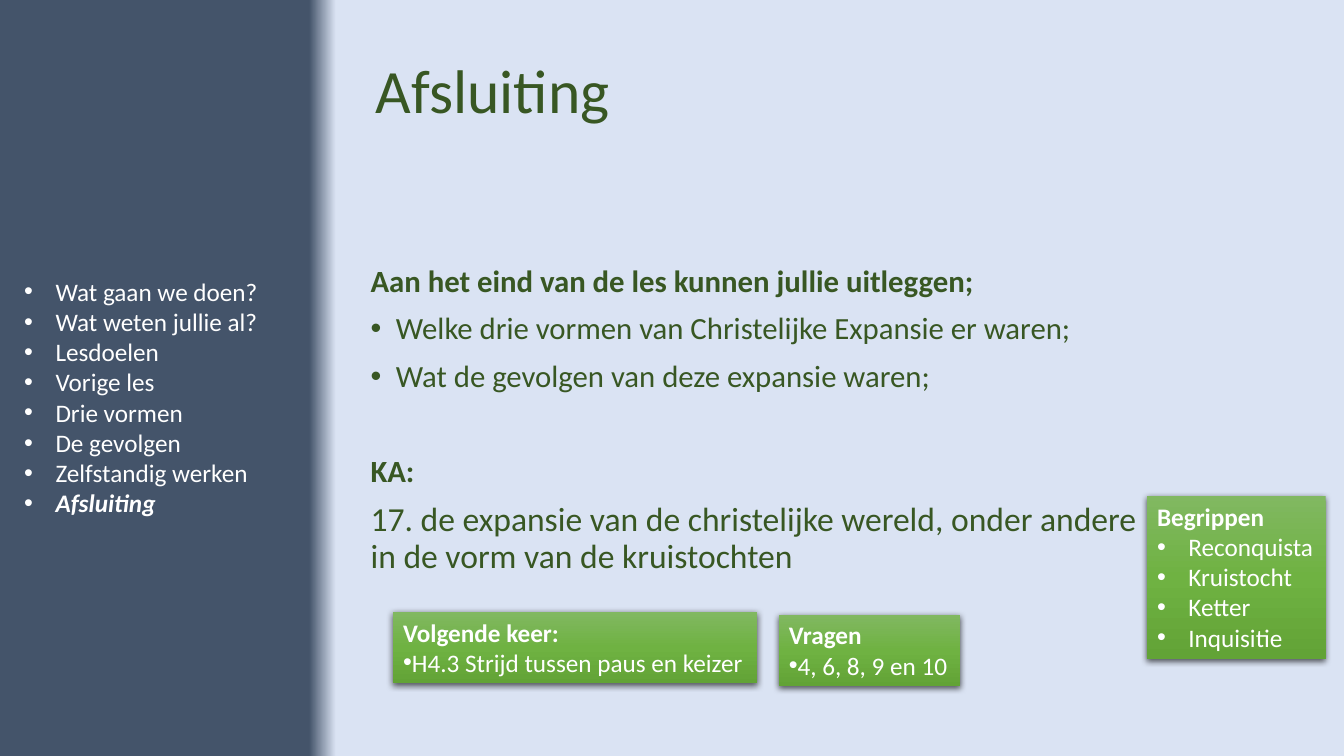
from dataclasses import dataclass

from lxml import etree
from pptx import Presentation
from pptx import util as u
from pptx.dml.color import RGBColor
from pptx.enum import shapes, text
from pptx.oxml.ns import qn

GREEN, WHITE, NAVY, PALE = "385723", "FFFFFF", "44546A", "DAE3F3"
CARD_STOPS = [(0, "81B861"), (50, "6FB242"), (100, "62A336")]
NAV_INDENT, BODY_INDENT = 0.79, 0.64


@dataclass
class Line:
    words: str
    bold: bool = False
    italic: bool = False
    bullet: bool = False
    indent: float = 0
    size: float = 18
    before: float = 0
    spacing: float = 1.0


@dataclass
class Block:
    left: float
    top: float
    width: float
    height: float
    lines: list[Line]
    color: str = WHITE
    wrap: bool = False
    card: bool = False
    anchor: text.MSO_ANCHOR = text.MSO_ANCHOR.TOP


def rgb(value: str) -> RGBColor:
    return RGBColor.from_string(value)


def set_gradient(fill, owner, stops: list[tuple[int, str]], angle: int) -> None:
    """Fill with a linear gradient; owner is the XML element that holds it."""
    fill.gradient()
    fill.gradient_angle = angle
    stop_list = next(owner.iter(qn("a:gsLst")))
    for old_stop in list(stop_list):
        stop_list.remove(old_stop)
    for percent, color in stops:
        stop = etree.SubElement(stop_list, qn("a:gs"), pos=str(percent * 1000))
        etree.SubElement(stop, qn("a:srgbClr"), val=color)


def style_card(card) -> None:
    """Give a card its green gradient and soft drop shadow."""
    set_gradient(card.fill, card.element.spPr, CARD_STOPS, 270)
    card.line.fill.background()
    card.shadow.inherit = False
    effects = card.element.spPr.find(qn("a:effectLst"))
    shadow = etree.SubElement(
        effects, qn("a:outerShdw"), blurRad=str(u.Pt(4.5)), dist=str(u.Pt(1.5)),
        dir="5400000", algn="ctr", rotWithShape="0")
    shade = etree.SubElement(shadow, qn("a:srgbClr"), val="000000")
    etree.SubElement(shade, qn("a:alpha"), val="63000")


def write_line(paragraph, line: Line, color: str) -> None:
    layout = {"alignment": text.PP_ALIGN.LEFT, "line_spacing": line.spacing,
              "space_before": u.Pt(line.before)}
    for name, value in layout.items():
        setattr(paragraph, name, value)
    run = paragraph.add_run()
    run.text = line.words
    face = {"name": "Calibri", "size": u.Pt(line.size),
            "bold": line.bold, "italic": line.italic}
    for name, value in face.items():
        setattr(run.font, name, value)
    run.font.color.rgb = rgb(color)
    if line.bullet:
        properties = paragraph._p.get_or_add_pPr()
        properties.set("marL", str(u.Cm(line.indent)))
        properties.set("indent", str(-u.Cm(line.indent)))
        etree.SubElement(properties, qn("a:buFont"), typeface="Arial")
        etree.SubElement(properties, qn("a:buChar"), char="•")


def draw_block(slide, block: Block) -> None:
    place = [u.Cm(n) for n in (block.left, block.top, block.width, block.height)]
    if block.card:
        holder = slide.shapes.add_shape(shapes.MSO_SHAPE.RECTANGLE, *place)
        style_card(holder)
    else:
        holder = slide.shapes.add_textbox(*place)
    frame = holder.text_frame
    settings = {"word_wrap": block.wrap, "vertical_anchor": block.anchor,
                "auto_size": text.MSO_AUTO_SIZE.NONE if block.wrap
                else text.MSO_AUTO_SIZE.SHAPE_TO_FIT_TEXT}
    for name, value in settings.items():
        setattr(frame, name, value)
    for index, line in enumerate(block.lines):
        paragraph = frame.add_paragraph() if index else frame.paragraphs[0]
        write_line(paragraph, line, block.color)


def bullets(items: list[str], indent: float = 0) -> list[Line]:
    return [Line(item, bullet=True, indent=indent) for item in items]


def goal(words: str, size: float = 22, before: float = 10, **extra) -> Line:
    """A line of the main text, with its own spacing."""
    return Line(words, size=size, before=before, spacing=0.9, **extra)


TITLE = Block(9.22, 0.53, 23.37, 3.68, [Line("Afsluiting", size=44, spacing=0.9)],
              GREEN, wrap=True, anchor=text.MSO_ANCHOR.MIDDLE)
NEXT_TIME = Block(9.91, 15.42, 9.17, 1.8, [
    Line("Volgende keer:", bold=True),
    *bullets(["H4.3 Strijd tussen paus en keizer"])], card=True)
QUESTIONS = Block(19.63, 15.49, 4.57, 1.8, [
    Line("Vragen", bold=True), *bullets(["4, 6, 8, 9 en 10"])], card=True)
GOALS = Block(9.09, 6.58, 20.07, 9.12, [
    goal("Aan het eind van de les kunnen jullie uitleggen;", bold=True),
    goal("Welke drie vormen van Christelijke Expansie er waren;",
         bullet=True, indent=BODY_INDENT),
    goal("Wat de gevolgen van deze expansie waren;",
         bullet=True, indent=BODY_INDENT),
    goal("KA:", before=44, bold=True),
    goal("17. de expansie van de christelijke wereld, onder andere "
         "in de vorm van de kruistochten", size=24),
], GREEN, wrap=True)
CONCEPTS = Block(28.91, 12.5, 4.5, 4.11, [
    Line("Begrippen", bold=True),
    *bullets(["Reconquista", "Kruistocht", "Ketter", "Inquisitie"], NAV_INDENT),
], card=True)
AGENDA = Block(0.36, 6.83, 6.71, 6.4, [
    *bullets(["Wat gaan we doen?", "Wat weten jullie al?", "Lesdoelen", "Vorige les",
              "Drie vormen", "De gevolgen", "Zelfstandig werken"], NAV_INDENT),
    Line("Afsluiting", bold=True, italic=True, bullet=True, indent=NAV_INDENT)])


def main() -> None:
    deck = Presentation()
    deck.slide_width, deck.slide_height = u.Cm(33.87), u.Cm(19.05)
    slide = deck.slides.add_slide(deck.slide_layouts[6])
    set_gradient(slide.background.fill, slide.element, [(23, NAVY), (25, PALE)], 0)
    for block in (TITLE, NEXT_TIME, QUESTIONS, GOALS, CONCEPTS, AGENDA):
        draw_block(slide, block)
    deck.save("out.pptx")


if __name__ == "__main__":
    main()
